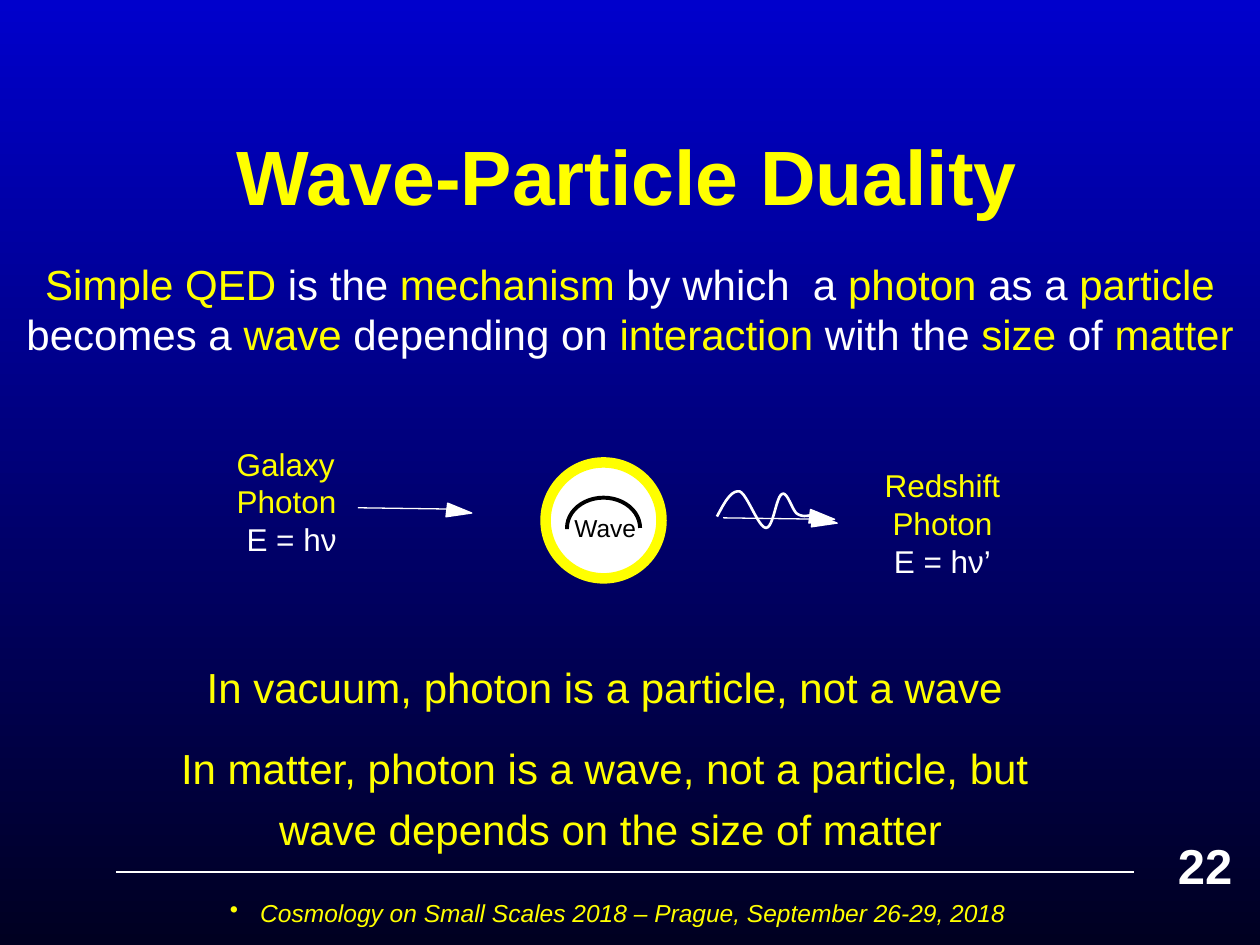
from lxml import etree
from pptx import Presentation
from pptx.dml.color import RGBColor
from pptx.enum.shapes import MSO_CONNECTOR, MSO_SHAPE
from pptx.enum.text import MSO_ANCHOR, PP_ALIGN
from pptx.oxml.ns import qn
from pptx.util import Inches, Pt

YELLOW = RGBColor(0xFF, 0xFF, 0x00)
WHITE = RGBColor(0xFF, 0xFF, 0xFF)
BLACK = RGBColor(0x00, 0x00, 0x00)
BLUE = RGBColor(0x00, 0x00, 0xCC)
NAVY = RGBColor(0x00, 0x00, 0x21)
LEFT, CENTER = PP_ALIGN.LEFT, PP_ALIGN.CENTER
TOP, MIDDLE = MSO_ANCHOR.TOP, MSO_ANCHOR.MIDDLE
OVAL, ARC = MSO_SHAPE.OVAL, MSO_SHAPE.ARC
HEAD = MSO_SHAPE.ISOSCELES_TRIANGLE
STRAIGHT = MSO_CONNECTOR.STRAIGHT


class Deck:
    """Draw styled elements on the current slide."""

    font = "Arial"

    def __init__(self):
        self.prs = Presentation()
        self.prs.slide_width, self.prs.slide_height = Inches(10), Inches(7.5)
        self.slide = self.prs.slides.add_slide(self.prs.slide_layouts[6])
        self.shapes = self.slide.shapes

    def back(self, start, end):
        fill = self.slide.background.fill
        fill.gradient()
        fill.gradient_angle = 270
        for stop, color, pos in zip(fill.gradient_stops, (start, end), (0, 1)):
            stop.color.rgb, stop.position = color, pos

    def text(self, box, paras, size, anchor=TOP, bold=False, italic=False):
        frame = self.shapes.add_textbox(*map(Inches, box)).text_frame
        frame.word_wrap = True
        frame.vertical_anchor = anchor
        for num, (align, gap, runs) in enumerate(paras):
            para = frame.add_paragraph() if num else frame.paragraphs[0]
            para.alignment, para.space_before = align, Pt(gap)
            for words, color in runs:
                run = para.add_run()
                run.text = words
                font = run.font
                font.name, font.size = self.font, Pt(size)
                font.bold, font.italic = bold, italic
                font.color.rgb = color
        return frame

    def bullet(self, para, indent):
        props = para._p.get_or_add_pPr()
        props.set("marL", str(Inches(indent)))
        props.set("indent", str(-Inches(indent)))
        etree.SubElement(props, qn("a:buChar")).set("char", "•")

    def paint(self, shape, fill, line, width):
        shape.shadow.inherit = False
        if fill is None:
            shape.fill.background()
        else:
            shape.fill.solid()
            shape.fill.fore_color.rgb = fill
        shape.line.color.rgb, shape.line.width = line, Pt(width)
        return shape

    def shape(self, kind, box, fill, line, width):
        item = self.shapes.add_shape(kind, *map(Inches, box))
        return self.paint(item, fill, line, width)

    def line(self, start, end):
        item = self.shapes.add_connector(STRAIGHT, *map(Inches, start + end))
        item.line.color.rgb, item.line.width = WHITE, Pt(0.75)
        etree.SubElement(item._element.spPr, qn("a:effectLst"))

    def head(self, x, y):
        self.shape(HEAD, (x, y, 0.11, 0.2), WHITE, WHITE, 0.75).rotation = 97.1

    def curve(self, start, parts, steps=12):
        points, last = [], start
        for one, two, end in parts:
            for step in range(1, steps + 1):
                t = step / steps
                s = 1 - t
                points.append(tuple(
                    Inches(s**3 * a + 3 * s * s * t * b + 3 * s * t * t * c + t**3 * d)
                    for a, b, c, d in zip(last, one, two, end)))
            last = end
        path = self.shapes.build_freeform(*map(Inches, start))
        path.add_line_segments(points, close=False)
        self.paint(path.convert_to_shape(), None, WHITE, 1.5)


def main():
    deck = Deck()
    deck.back(BLUE, NAVY)
    deck.line((0.92, 6.92), (9, 6.92))
    deck.text((0.73, 0.58, 8.5, 1.61),
              [(CENTER, 0, [("Wave-Particle Duality", YELLOW)])],
              44, anchor=MIDDLE, bold=True)
    foot = deck.text(
        (0.17, 7.08, 9.67, 0.42),
        [(CENTER, 1.5, [("Cosmology on Small Scales 2018 – Prague, "
                         "September 26-29, 2018", YELLOW)])],
        14, italic=True)
    foot.margin_right = Inches(0.3)
    deck.bullet(foot.paragraphs[0], 0.24)
    deck.text((9.25, 6.58, 0.75, 0.57), [(LEFT, 3, [("22", WHITE)])], 28, bold=True)

    words = ("Simple QED", " is the ", "mechanism", " by which  a ", "photon",
             " as a ", "particle", " becomes a ", "wave", " depending on ",
             "interaction", " with the ", "size", " of ", "matter")
    runs = [(word, WHITE if num % 2 else YELLOW) for num, word in enumerate(words)]
    deck.text((0.03, 2, 9.94, 1.25), [(CENTER, 3, runs)], 24)

    deck.shape(OVAL, (4.32, 3.68, 0.92, 0.92), WHITE, WHITE, 2.25)
    deck.shape(OVAL, (4.33, 3.67, 0.92, 0.92), None, YELLOW, 6)
    arc = deck.shape(ARC, (4.5, 3.95, 0.58, 0.48), None, BLACK, 2.25)
    arc.adjustments[0], arc.adjustments[1] = 106.97, 0
    deck.text((4.46, 4.02, 0.87, 0.34), [(LEFT, 0, [("Wave", BLACK)])], 14)

    deck.text((1.78, 3.48, 1.07, 1.01),
              [(LEFT, 0, [("Galaxy  Photon", YELLOW)]),
               (CENTER, 0, [("E = hν", WHITE)])], 18)
    deck.text((6.75, 3.65, 1.46, 1.01),
              [(CENTER, 0, [("Redshift", YELLOW)]),
               (CENTER, 0, [("Photon", YELLOW)]),
               (CENTER, 0, [("E = hν’", WHITE)])], 18)

    deck.text((-0.17, 5.2, 9.94, 1.25),
              [(CENTER, gap, [(words, YELLOW)]) for gap, words in (
                  (3, "In vacuum, photon is a particle, not a wave"),
                  (17.5, "In matter, photon is a wave, not a particle, but"),
                  (6, " wave depends on the size of matter"))], 24)

    deck.curve((5.69, 4.1), [
        ((5.75, 3.99), (5.8, 3.89), (5.87, 3.9)),
        ((5.93, 3.92), (6.02, 4.19), (6.08, 4.19)),
        ((6.14, 4.19), (6.16, 3.93), (6.21, 3.92)),
        ((6.25, 3.9), (6.29, 4.06), (6.33, 4.08)),
        ((6.38, 4.11), (6.44, 4.09), (6.49, 4.07))])
    deck.head(6.47, 4.01)
    for x, y in ((2.84, 4.03), (5.74, 4.11)):
        deck.head(x + 0.75, y - 0.07)
        deck.line((x + 0.71, y + 0.01), (x, y))
    deck.prs.save("out.pptx")


if __name__ == "__main__":
    main()
